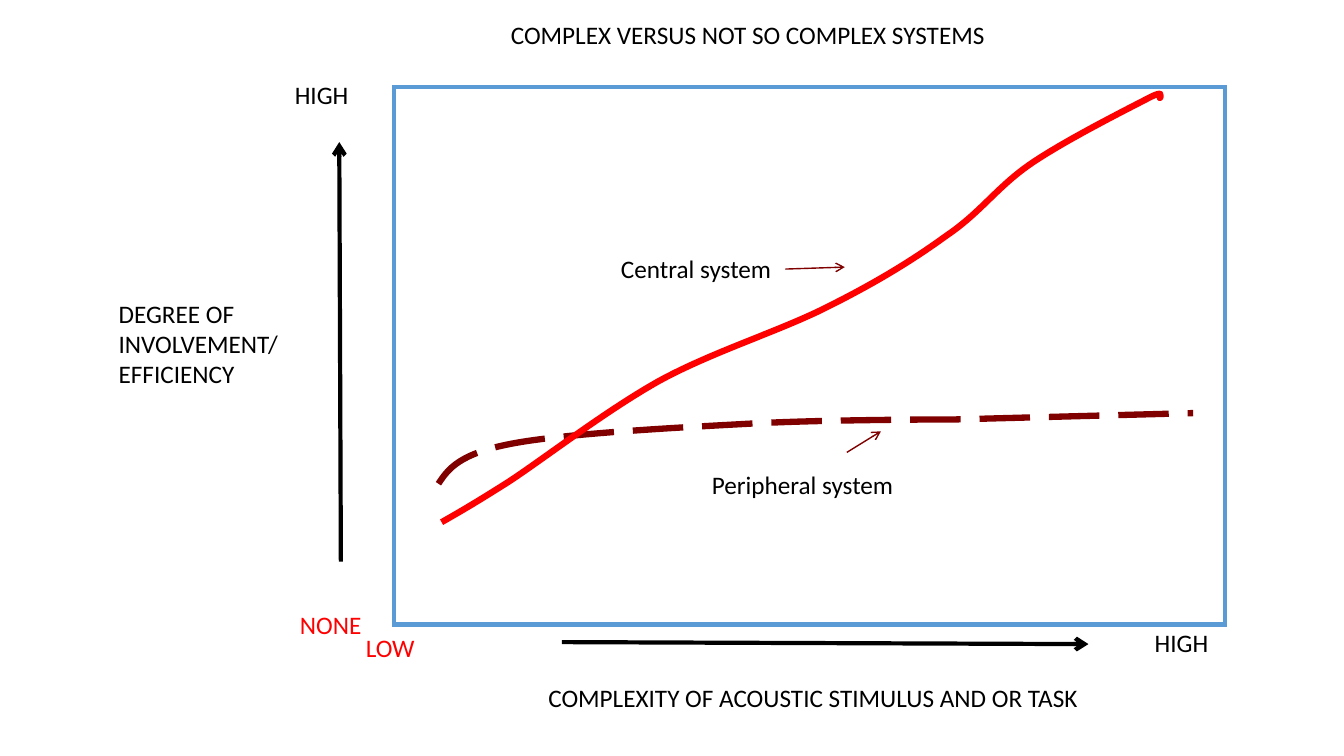
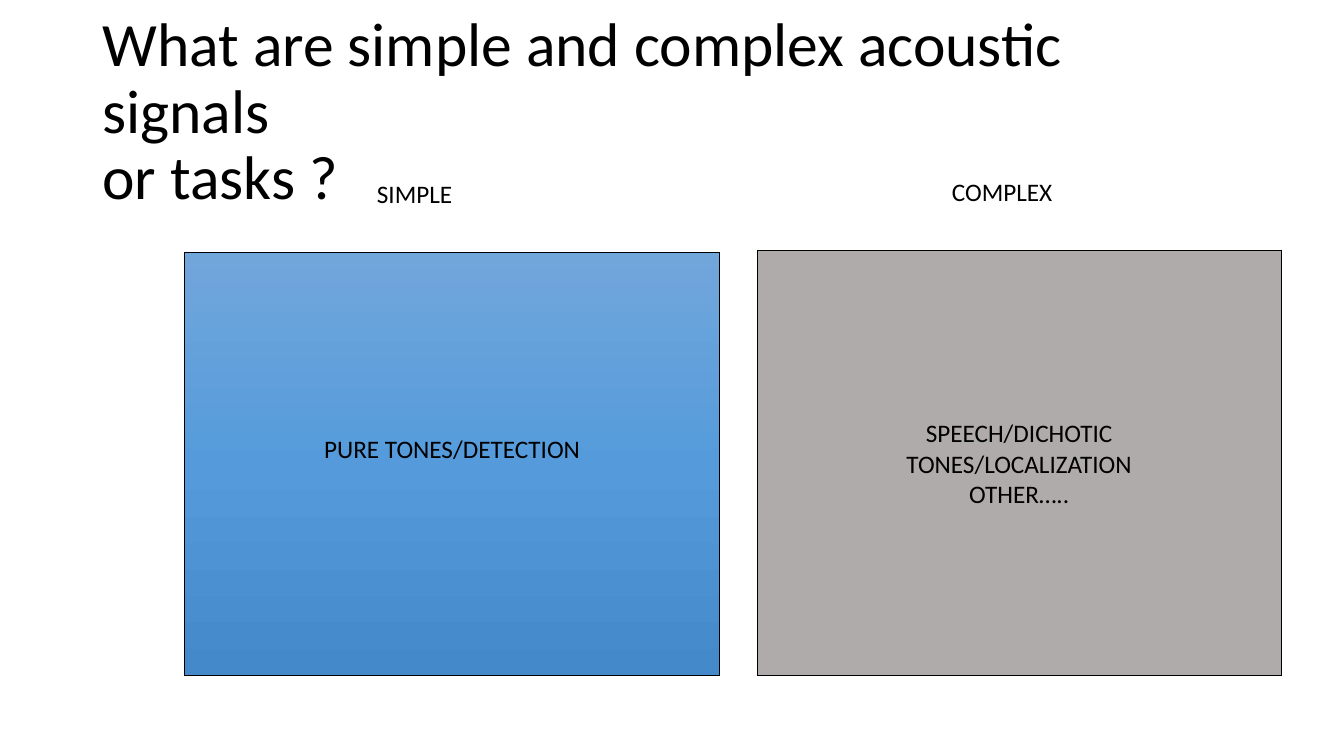
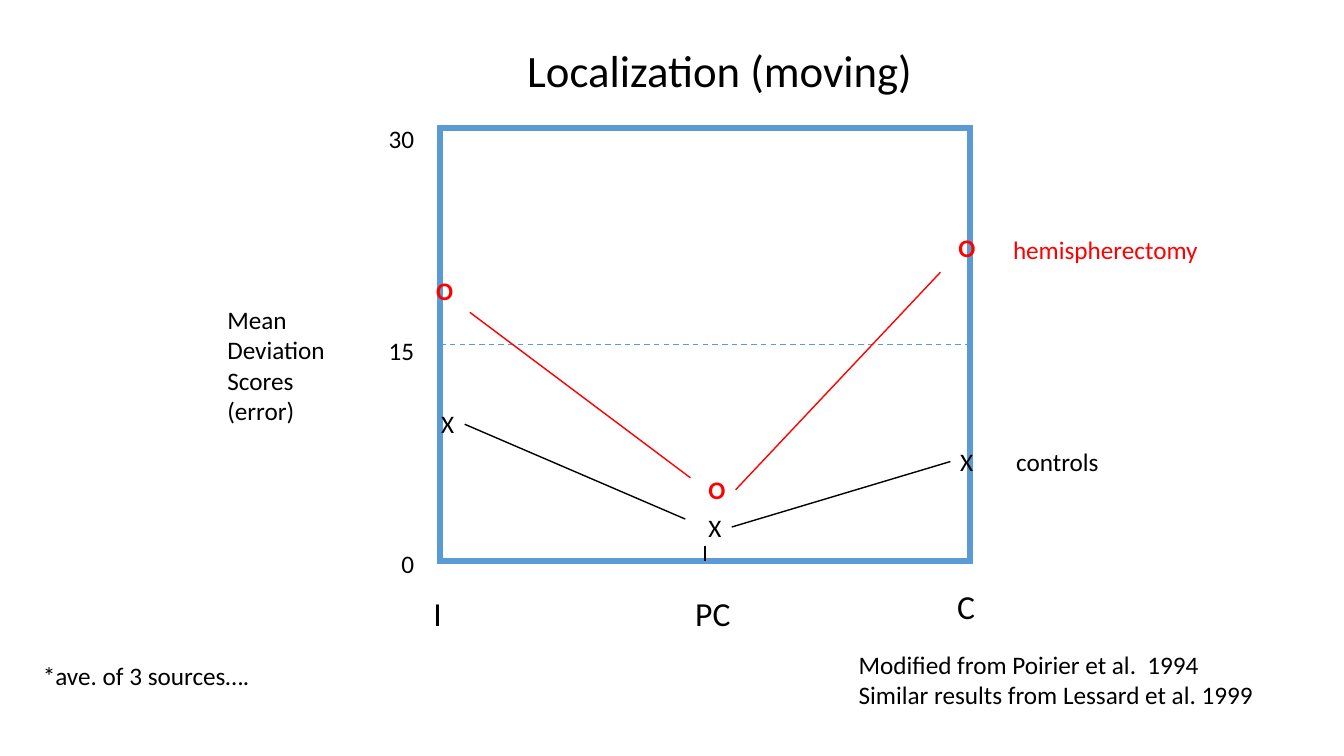
from copy import deepcopy
from dataclasses import dataclass
from typing import NamedTuple, Optional

from lxml import etree
from pptx import Presentation
from pptx.dml.color import RGBColor
from pptx.enum.dml import MSO_LINE
from pptx.enum.shapes import MSO_CONNECTOR, MSO_SHAPE
from pptx.enum.text import MSO_ANCHOR, MSO_AUTO_SIZE, PP_ALIGN
from pptx.oxml.ns import qn
from pptx.util import Cm, Pt

RECTANGLE = MSO_SHAPE.RECTANGLE
STRAIGHT = MSO_CONNECTOR.STRAIGHT
DASH, LONG_DASH = MSO_LINE.DASH, MSO_LINE.LONG_DASH
LEFT, CENTER, RIGHT = PP_ALIGN.LEFT, PP_ALIGN.CENTER, PP_ALIGN.RIGHT
TOP, MIDDLE = MSO_ANCHOR.TOP, MSO_ANCHOR.MIDDLE
FIT, FIXED = MSO_AUTO_SIZE.SHAPE_TO_FIT_TEXT, MSO_AUTO_SIZE.NONE

FONT = "Calibri"
TITLE_ONLY = 5
COLORS = {
    "black": "000000",
    "red": "FF0000",
    "maroon": "800000",
    "blue": "5B9BD5",
    "gray": "AFABAB",
    "blue_top": "71A6DB",
    "blue_middle": "559BDB",
    "blue_bottom": "448ACA",
}


class Point(NamedTuple):
    x: float
    y: float


class Area(NamedTuple):
    """A rectangle in centimetres."""
    left: float
    top: float
    width: float
    height: float = 1.02

    @property
    def center(self) -> Point:
        return Point(self.left + self.width / 2, self.top + self.height / 2)

    def lengths(self) -> list:
        return [Cm(value) for value in self]


@dataclass
class Label:
    text: str
    area: Area
    color: str = "black"
    size: int = 18
    bold: bool = False
    align: int = LEFT
    wrap: bool = False


@dataclass
class Line:
    start: tuple
    end: tuple
    color: str = "black"
    width: float = 1
    dash: Optional[int] = None
    arrow: bool = False


@dataclass
class Curve:
    """Bezier curve: a start point, then three points for each piece."""
    points: list
    color: str
    dash: Optional[int] = None


@dataclass
class Panel:
    text: str
    area: Area
    fills: list
    bottom_margin: float = 0.13


@dataclass
class Series:
    mark: str
    color: str
    bold: bool
    mark_width: float
    marks: list
    lines: list


# Shared drawing functions

def rgb(name: str) -> RGBColor:
    return RGBColor.from_string(COLORS[name])


def write_text(shape, text: str, *, size=18, color="black", bold=False, align=LEFT,
               anchor=TOP, wrap=False, auto_size=FIT, spacing=1.0, breaks=False) -> None:
    """Write one paragraph a line, or one paragraph with line breaks."""
    frame = shape.text_frame
    frame.word_wrap = wrap
    frame.auto_size = auto_size
    frame.vertical_anchor = anchor
    for index, content in enumerate([text] if breaks else text.split("\n")):
        para = frame.add_paragraph() if index else frame.paragraphs[0]
        para.text = content
        para.alignment = align
        para.line_spacing = spacing
        for span in para.runs:
            span.font.name = FONT
            span.font.size = Pt(size)
            span.font.bold = bold
            span.font.color.rgb = rgb(color)


def add_page(deck, title: str, area: Area, **text_format):
    page = deck.slides.add_slide(deck.slide_layouts[TITLE_ONLY])
    box = page.shapes.title
    box.left, box.top, box.width, box.height = area.lengths()
    write_text(box, title, **text_format)
    return page


def add_label(page, label: Label) -> None:
    box = page.shapes.add_textbox(*label.area.lengths())
    write_text(box, label.text, size=label.size, color=label.color, bold=label.bold,
               align=label.align, wrap=label.wrap)


def style_line(shape, color: str, width: float, dash: Optional[int] = None) -> None:
    shape.line.color.rgb = rgb(color)
    shape.line.width = Pt(width)
    if dash is not None:
        shape.line.dash_style = dash


def add_line(page, line: Line) -> None:
    ends = [Cm(value) for value in (*line.start, *line.end)]
    connector = page.shapes.add_connector(STRAIGHT, *ends)
    style_line(connector, line.color, line.width, line.dash)
    properties = connector.element.spPr
    if line.arrow:
        etree.SubElement(properties.find(qn("a:ln")), qn("a:tailEnd"), type="arrow")
    etree.SubElement(properties, qn("a:effectLst"))


def add_rectangle(page, area: Area, color: str, width: float):
    shape = page.shapes.add_shape(RECTANGLE, *area.lengths())
    shape.shadow.inherit = False
    shape.fill.background()
    style_line(shape, color, width)
    # Square corners
    etree.SubElement(shape.element.spPr.find(qn("a:ln")), qn("a:miter"), lim="800000")
    return shape


def add_curve(page, curve: Curve) -> None:
    start, *others = [(Cm(x), Cm(y)) for x, y in curve.points]
    builder = page.shapes.build_freeform(*start)
    builder.add_line_segments(others, close=False)
    shape = builder.convert_to_shape()
    shape.shadow.inherit = False
    shape.fill.background()
    style_line(shape, curve.color, 4.5, curve.dash)
    # Join each three straight segments into one Bezier piece
    segments = list(shape.element.iter(qn("a:lnTo")))
    outline = segments[0].getparent()
    for first in range(0, len(segments), 3):
        piece = etree.SubElement(outline, qn("a:cubicBezTo"))
        for segment in segments[first:first + 3]:
            piece.append(segment[0])
            outline.remove(segment)


def add_panel(page, panel: Panel) -> None:
    shape = add_rectangle(page, panel.area, "black", 0.5)
    if len(panel.fills) == 1:
        shape.fill.solid()
        shape.fill.fore_color.rgb = rgb(panel.fills[0])
    else:
        shape.fill.gradient()
        shape.fill.gradient_angle = 270
        stop_list = shape.element.spPr.find(qn("a:gradFill")).find(qn("a:gsLst"))
        while len(stop_list) < len(panel.fills):
            stop_list.insert(1, deepcopy(stop_list[0]))
        for index, stop in enumerate(shape.fill.gradient_stops):
            stop.position = index / (len(panel.fills) - 1)
            stop.color.rgb = rgb(panel.fills[index])
    write_text(shape, panel.text, align=CENTER, anchor=MIDDLE, wrap=True, auto_size=FIXED)
    shape.text_frame.margin_bottom = Cm(panel.bottom_margin)


# Slide 1: two systems against complexity

SYSTEM_LABELS = [
    Label("COMPLEXITY OF ACOUSTIC STIMULUS AND OR TASK", Area(13.57, 17.07, 14.07)),
    Label("LOW", Area(8.97, 15.82, 1.78), "red"),
    Label("HIGH", Area(28.85, 15.69, 1.88)),
    Label("DEGREE OF\nINVOLVEMENT/\nEFFICIENCY", Area(2.74, 7.39, 4.65, 2.57)),
    Label("NONE", Area(7.31, 15.24, 2.08), "red"),
    Label("HIGH", Area(7.18, 1.88, 1.88)),
    Label("Peripheral system", Area(17.69, 11.71, 5.18)),
    Label("Central system", Area(15.4, 6.27, 4.39)),
]
SYSTEM_ARROWS = [
    Line((14.16, 16.18), (27.43, 16.23), width=3, arrow=True),
    Line((8.59, 14.15), (8.55, 3.58), width=3, arrow=True),
    Line((19.79, 6.78), (21.29, 6.73), "maroon", arrow=True),
    Line((21.34, 11.4), (22.2, 10.87), "maroon", arrow=True),
]
SYSTEM_CURVES = [
    Curve([(11.05, 12.19),
           (11.3, 11.81), (11.58, 11.43), (12.9, 11.18),
           (14.25, 10.92), (17.17, 10.77), (19.02, 10.67),
           (20.88, 10.57), (24.08, 10.57), (24.08, 10.57),
           (24.08, 10.57), (30.07, 10.41), (30.07, 10.41)], "maroon", LONG_DASH),
    Curve([(11.13, 13.16),
           (11.53, 12.93), (11.94, 12.7), (12.85, 12.12),
           (13.77, 11.51), (15.29, 10.34), (16.61, 9.6),
           (17.96, 8.86), (19.69, 8.33), (20.88, 7.72),
           (22.1, 7.11), (23.01, 6.55), (23.85, 5.94),
           (24.71, 5.36), (25.12, 4.72), (25.96, 4.14),
           (26.8, 3.56), (28.37, 2.77), (28.91, 2.49),
           (29.44, 2.21), (29.18, 2.48), (29.23, 2.47),
           (29.28, 2.46), (29.23, 2.42), (29.23, 2.42)], "red"),
]


def build_systems(deck) -> None:
    page = add_page(deck, "COMPLEX VERSUS NOT SO COMPLEX SYSTEMS", Area(12.62, 0.36, 12.62))
    add_rectangle(page, Area(9.93, 2.2, 20.95, 13.54), "blue", 3)
    for curve in SYSTEM_CURVES:
        add_curve(page, curve)
    for arrow in SYSTEM_ARROWS:
        add_line(page, arrow)
    for label in SYSTEM_LABELS:
        add_label(page, label)


# Slide 2: simple and complex signals

SIGNAL_PANELS = [
    Panel("PURE TONES/DETECTION", Area(4.65, 6.35, 13.49, 10.67),
          ["blue_top", "blue_middle", "blue_bottom"], bottom_margin=0.9),
    Panel("SPEECH/DICHOTIC\nTONES/LOCALIZATION\nOTHER…..",
          Area(19.08, 6.31, 13.21, 10.72), ["gray"]),
]
SIGNAL_LABELS = [
    Label("SIMPLE", Area(9.25, 4.37, 2.44)),
    Label("COMPLEX", Area(23.74, 4.32, 3.07)),
]


def build_signals(deck) -> None:
    page = add_page(deck, "What are simple and complex acoustic signals\nor tasks ?",
                    Area(2.33, 1.02, 29.2, 3.68), size=44, anchor=MIDDLE, wrap=True,
                    auto_size=FIXED, spacing=0.9, breaks=True)
    for panel in SIGNAL_PANELS:
        add_panel(page, panel)
    for label in SIGNAL_LABELS:
        add_label(page, label)


# Slide 3: localization scores

SCORE_FRAME = Area(11.09, 3.22, 13.36, 10.92)
SCORE_STEP = 5.35
SCORE_LABELS = [
    Label("I", Area(10.67, 14.81, 0.74, 1.27), size=24),
    Label("PC", Area(17.27, 14.81, 1.42, 1.27), size=24),
    Label("C", Area(23.87, 14.64, 0.97, 1.27), size=24),
    Label("Mean\nDeviation\nScores\n(error)", Area(5.48, 7.55, 3, 3.33)),
    Label("hemispherectomy", Area(25.28, 5.77, 5.26), "red"),
    Label("controls", Area(25.36, 11.13, 2.64)),
    Label("Modified from Poirier et al.  1994\nSimilar results from Lessard et al. 1999",
          Area(21.39, 16.23, 10.59, 1.8)),
    Label("*ave. of 3 sources….", Area(0.83, 16.51, 5.79)),
]
SCORE_SERIES = [
    Series("X", "black", False, 0.84,
           [(10.87, 10.16), (17.6, 12.78), (23.95, 11.13)],
           [((11.71, 10.69), (17.27, 13.08)), ((18.44, 13.28), (23.95, 11.63))]),
    Series("O", "red", True, 0.94,
           [(10.74, 6.81), (17.6, 11.84), (23.9, 5.72)],
           [((11.84, 7.87), (17.4, 12.04)), ((18.54, 12.34), (23.7, 6.86))]),
]


def build_scores(deck) -> None:
    page = add_page(deck, "Localization (moving)", Area(13.03, 0.95, 10.34, 1.63), size=32)
    # Plot frame, middle line and centre tick
    frame = SCORE_FRAME
    add_rectangle(page, frame, "blue", 4.5)
    middle = frame.center
    add_line(page, Line((frame.left, middle.y), (frame.left + frame.width, middle.y),
                        "blue", dash=DASH))
    add_line(page, Line((middle.x, 13.77), (middle.x, 14.13)))
    # Scale
    for index, score in enumerate((30, 15, 0)):
        area = Area(9.52, 2.98 + index * SCORE_STEP, 1.17)
        add_label(page, Label(str(score), area, align=RIGHT, wrap=True))
    # Marks and the lines between them
    for series in SCORE_SERIES:
        for left, top in series.marks:
            add_label(page, Label(series.mark, Area(left, top, series.mark_width),
                                  series.color, bold=series.bold))
        for start, end in series.lines:
            add_line(page, Line(start, end, series.color))
    for label in SCORE_LABELS:
        add_label(page, label)


def main() -> None:
    deck = Presentation()
    deck.slide_width, deck.slide_height = Cm(33.87), Cm(19.05)
    build_systems(deck)
    build_signals(deck)
    build_scores(deck)
    deck.save("out.pptx")


if __name__ == "__main__":
    main()
